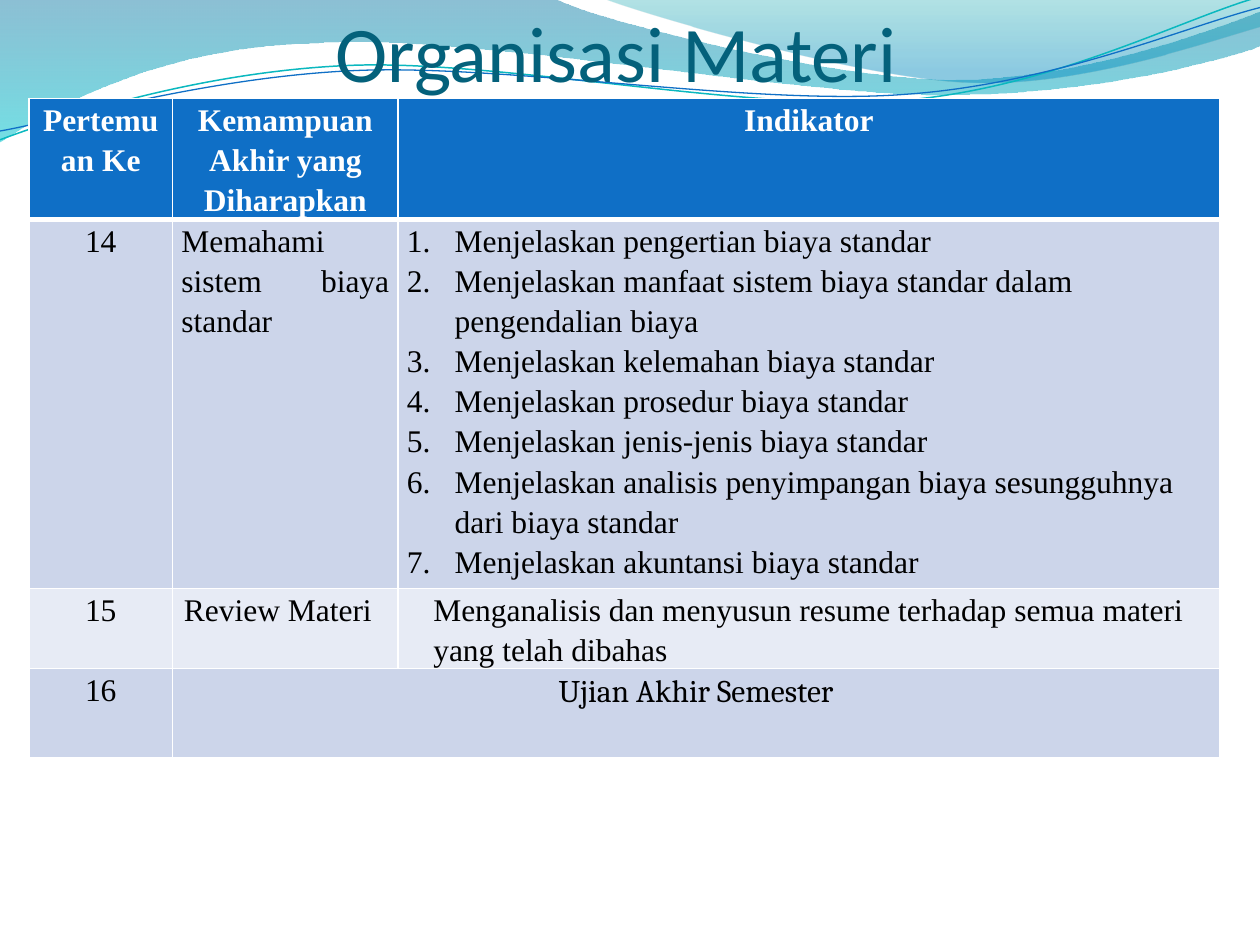
from lxml.etree import SubElement
from pptx import Presentation
from pptx.dml.color import RGBColor
from pptx.enum.text import MSO_ANCHOR, MSO_AUTO_SIZE, PP_ALIGN
from pptx.oxml.ns import qn
from pptx.util import Inches, Pt

WHITE = RGBColor(0xFF, 0xFF, 0xFF)
BLACK = RGBColor(0, 0, 0)
TITLE = RGBColor(0x04, 0x61, 0x7B)
HEADER = RGBColor(0x0F, 0x6F, 0xC6)
BAND = RGBColor(0xCC, 0xD5, 0xEA)
BAND_LIGHT = RGBColor(0xE7, 0xEB, 0xF5)
TEAL = RGBColor(0x0A, 0xB8, 0xBF)
DEEP_BLUE = RGBColor(0x00, 0x74, 0xA1)
CYAN = RGBColor(0x00, 0xC6, 0xCF)
DEEP_TEAL = RGBColor(0x00, 0xA1, 0xA9)
SKY = RGBColor(0x00, 0x8B, 0xBF)

CENTER, JUSTIFY, LEFT = PP_ALIGN.CENTER, PP_ALIGN.JUSTIFY, PP_ALIGN.LEFT

HEADINGS = ["Pertemuan Ke", "Kemampuan Akhir yang Diharapkan", "Indikator"]
INDICATORS = [
    "Menjelaskan pengertian biaya standar",
    "Menjelaskan manfaat sistem biaya standar dalam pengendalian biaya",
    "Menjelaskan kelemahan biaya standar",
    "Menjelaskan prosedur biaya standar",
    "Menjelaskan jenis-jenis biaya standar",
    "Menjelaskan analisis penyimpangan biaya sesungguhnya dari biaya standar",
    "Menjelaskan akuntansi biaya standar",
]
REVIEW = "Menganalisis dan menyusun resume terhadap semua materi yang telah dibahas"
ROWS = [
    [(h, dict(bold=True, color=WHITE, align=CENTER)) for h in HEADINGS],
    [("14", dict(align=CENTER)),
     ("Memahami sistem biaya standar", dict(align=JUSTIFY, after=10)),
     (INDICATORS, dict(numbered=True, margin=0.38))],
    [("15", dict(align=CENTER)),
     ("Review Materi", dict(align=JUSTIFY, margin=0.02)),
     (REVIEW, dict(margin=0.21))],
    [("16", dict(align=CENTER)),
     ("Ujian Akhir Semester", dict(align=CENTER, font="Cambria"))],
]
FILLS = [HEADER, BAND, BAND_LIGHT, BAND]
COL_WIDTHS = [1.14, 1.79, 6.52]
ROW_HEIGHTS = [0.96, 2.93, 0.63, 0.71]

WAVES = [
    ([[(0, 0)], [(4.4, -0.01)],
      [(4.76, 0.17), (6.64, 0.63), (7.58, 0.63)],
      [(8.53, 0.63), (9.58, 0.26), (10, 0.09)], [(10.01, 0.36)],
      [(9.83, 0.44), (8.7, 0.76), (7.46, 0.75)],
      [(6.22, 0.75), (3.82, 0.28), (2.57, 0.34)],
      [(1.29, 0.36), (0.46, 0.83), (-0.01, 1.13)], [(0, 0)]],
     [(DEEP_BLUE, 0, 45), (CYAN, 1, 55)]),
    ([[(4.79, -0.01)],
      [(5.09, 0.11), (6.82, 0.62), (7.69, 0.65)],
      [(8.56, 0.69), (9.61, 0.32), (10, 0.21)], [(10, 0)], [(4.79, -0.01)]],
     [(DEEP_TEAL, 0, 30), (SKY, 0.8, 45)]),
]
CURVES = [
    ([[(0, 1.11)],
      [(0.48, 0.93), (1.58, 0.57), (2.77, 0.52)],
      [(3.95, 0.47), (5.93, 0.89), (7.13, 0.8)],
      [(8.33, 0.71), (9.38, 0.15), (9.98, -0.02)]], TEAL, 0.85),
    ([[(0, 1.04)],
      [(0.47, 0.96), (1.64, 0.61), (2.83, 0.56)],
      [(4.03, 0.51), (5.97, 0.84), (7.17, 0.75)],
      [(8.36, 0.67), (9.41, 0.21), (10, 0.06)]], HEADER, 0.75),
]


def add_outline(s, segments, close):
    start, *rest = [(Inches(x), Inches(y)) for seg in segments for x, y in seg]
    builder = s.shapes.build_freeform(*start)
    builder.add_line_segments(rest, close=close)
    sp = builder.convert_to_shape()
    sp.shadow.inherit = False
    lines = iter(list(sp._element.iter(qn("a:lnTo"))))
    for seg in segments[1:]:
        first, *others = [next(lines) for _ in seg]
        if others:
            first.tag = qn("a:cubicBezTo")
        for line in others:
            first.append(line[0])
            line.getparent().remove(line)
    return sp


def add_wave(s, segments, stops):
    sp = add_outline(s, segments, True)
    sp.line.fill.background()
    sp.fill.gradient()
    sp.fill.gradient_angle = 270
    for stop, (color, position, _) in zip(sp.fill.gradient_stops, stops):
        stop.color.rgb = color
        stop.position = position
    for clr, (_, _, alpha) in zip(sp._element.spPr.iter(qn("a:srgbClr")), stops):
        SubElement(clr, qn("a:alpha"), val=str(alpha * 1000))


def add_curve(s, segments, color, width):
    sp = add_outline(s, segments, False)
    sp.fill.background()
    sp.line.color.rgb = color
    sp.line.width = Pt(width)


def write(tf, text, font="Times New Roman", size=18, color=BLACK, bold=False,
          align=LEFT, spacing=1.15, after=0, margin=0, numbered=False):
    tf.word_wrap = True
    for i, line in enumerate([text] if isinstance(text, str) else text):
        p = tf.add_paragraph() if i else tf.paragraphs[0]
        p.alignment = align
        p.line_spacing = spacing
        p.space_before = Pt(0)
        p.space_after = Pt(after)
        pPr = p._p.get_or_add_pPr()
        pPr.set("marL", str(Inches(margin)))
        pPr.set("indent", str(Inches(-margin if numbered else 0)))
        if numbered:
            SubElement(pPr, qn("a:buAutoNum"), type="arabicPeriod")
        r = p.add_run()
        r.text = line
        r.font.name = font
        r.font.size = Pt(size)
        r.font.bold = bold
        r.font.color.rgb = color


def set_borders(cell, top=1, bottom=1):
    tcPr = cell._tc.get_or_add_tcPr()
    for side, width in (("L", 1), ("R", 1), ("T", top), ("B", bottom)):
        ln = SubElement(tcPr, qn(f"a:ln{side}"), w=str(Pt(width)))
        SubElement(SubElement(ln, qn("a:solidFill")), qn("a:srgbClr"), val=str(WHITE))


def add_schedule(s):
    table = s.shapes.add_table(len(ROWS), len(COL_WIDTHS), Inches(0.23), Inches(0.78),
                               Inches(sum(COL_WIDTHS)), Inches(sum(ROW_HEIGHTS))).table
    for col, width in zip(table.columns, COL_WIDTHS):
        col.width = Inches(width)
    for row, height in zip(table.rows, ROW_HEIGHTS):
        row.height = Inches(height)
    table.cell(3, 1).merge(table.cell(3, 2))
    for i, (row, fill) in enumerate(zip(ROWS, FILLS)):
        for j in range(len(COL_WIDTHS)):
            cell = table.cell(i, j)
            cell.margin_left = cell.margin_right = Inches(0.07)
            cell.margin_top = cell.margin_bottom = 0
            set_borders(cell, 3 if i == 1 else 1, 3 if i == 0 else 1)
            cell.fill.solid()
            cell.fill.fore_color.rgb = fill
        for j, (text, fmt) in enumerate(row):
            write(table.cell(i, j).text_frame, text, **fmt)


def main():
    prs = Presentation()
    prs.slide_width, prs.slide_height = Inches(10), Inches(7.5)
    s = prs.slides.add_slide(prs.slide_layouts[5])
    for wave in WAVES:
        add_wave(s, *wave)
    for curve in CURVES:
        add_curve(s, *curve)

    title = s.shapes.title
    s.shapes._spTree.append(title._element)
    title.left, title.top = Inches(0.39), Inches(0)
    title.width, title.height = Inches(9), Inches(0.78)
    tf = title.text_frame
    tf.auto_size = MSO_AUTO_SIZE.NONE
    tf.vertical_anchor = MSO_ANCHOR.BOTTOM
    tf.margin_left = tf.margin_right = tf.margin_bottom = 0
    tf.margin_top = Inches(0.05)
    write(tf, "Organisasi Materi", font="Calibri", size=45, color=TITLE,
          align=CENTER, spacing=1.0)

    add_schedule(s)
    prs.save("out.pptx")


if __name__ == "__main__":
    main()
